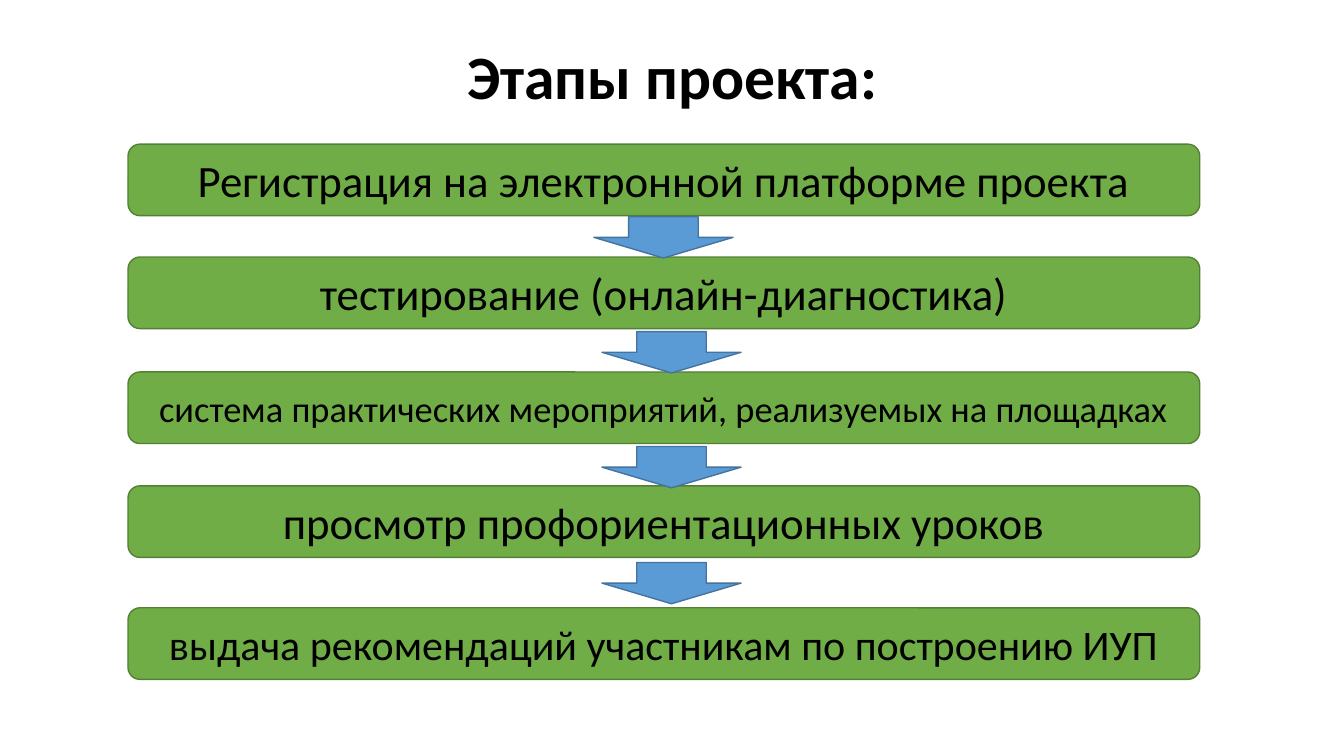
from pptx import Presentation
from pptx.dml.color import RGBColor
from pptx.enum.shapes import MSO_SHAPE as Shape
from pptx.enum.text import MSO_ANCHOR as Anchor, PP_ALIGN as Align
from pptx.util import Inches, Pt

HEADING = "Этапы проекта:"
STAGES = [
    ("Регистрация на электронной платформе проекта", 32, 1.43),
    ("тестирование (онлайн-диагностика)", 32, 2.55),
    ("система практических мероприятий, реализуемых на площадках", 26, 3.69),
    ("просмотр профориентационных уроков", 32, 4.82),
    ("выдача рекомендаций участникам по построению ИУП", 30, 6.03),
]
ARROWS = [(5.89, 2.15), (5.97, 3.29), (5.97, 4.43), (5.97, 5.58)]
STAGE_LEFT, STAGE_WIDTH, STAGE_HEIGHT = 1.27, 10.63, 0.71
ARROW_WIDTH, ARROW_HEIGHT = 1.38, 0.41


def color(value):
    return RGBColor.from_string(value)


def write(frame, text, size, bold=False):
    frame.text = text
    frame.word_wrap = True
    frame.vertical_anchor = Anchor.MIDDLE
    paragraph = frame.paragraphs[0]
    paragraph.alignment = Align.CENTER
    paragraph.font.name = "Calibri"
    paragraph.font.size = Pt(size)
    paragraph.font.bold = bold
    paragraph.font.color.rgb = color("000000")
    return paragraph


def add_block(slide, kind, box, fill, line):
    block = slide.shapes.add_shape(kind, *map(Inches, box))
    block.shadow.inherit = False
    block.fill.solid()
    block.fill.fore_color.rgb = color(fill)
    block.line.color.rgb = color(line)
    block.line.width = Pt(1)
    return block


def main():
    deck = Presentation()
    deck.slide_width, deck.slide_height = Inches(13.33), Inches(7.5)
    slide = deck.slides.add_slide(deck.slide_layouts[5])

    heading = slide.shapes.title
    heading.left, heading.top = Inches(0.92), Inches(0.4)
    heading.width, heading.height = Inches(11.5), Inches(0.78)
    write(heading.text_frame, HEADING, 44, bold=True).line_spacing = 0.9

    for text, size, top in STAGES:
        box = (STAGE_LEFT, top, STAGE_WIDTH, STAGE_HEIGHT)
        stage = add_block(slide, Shape.ROUNDED_RECTANGLE, box, "70AD47", "538035")
        write(stage.text_frame, text, size)

    for left, top in ARROWS:
        box = (left, top, ARROW_WIDTH, ARROW_HEIGHT)
        add_block(slide, Shape.DOWN_ARROW, box, "5B9BD5", "43739E")

    deck.save("out.pptx")


if __name__ == "__main__":
    main()
